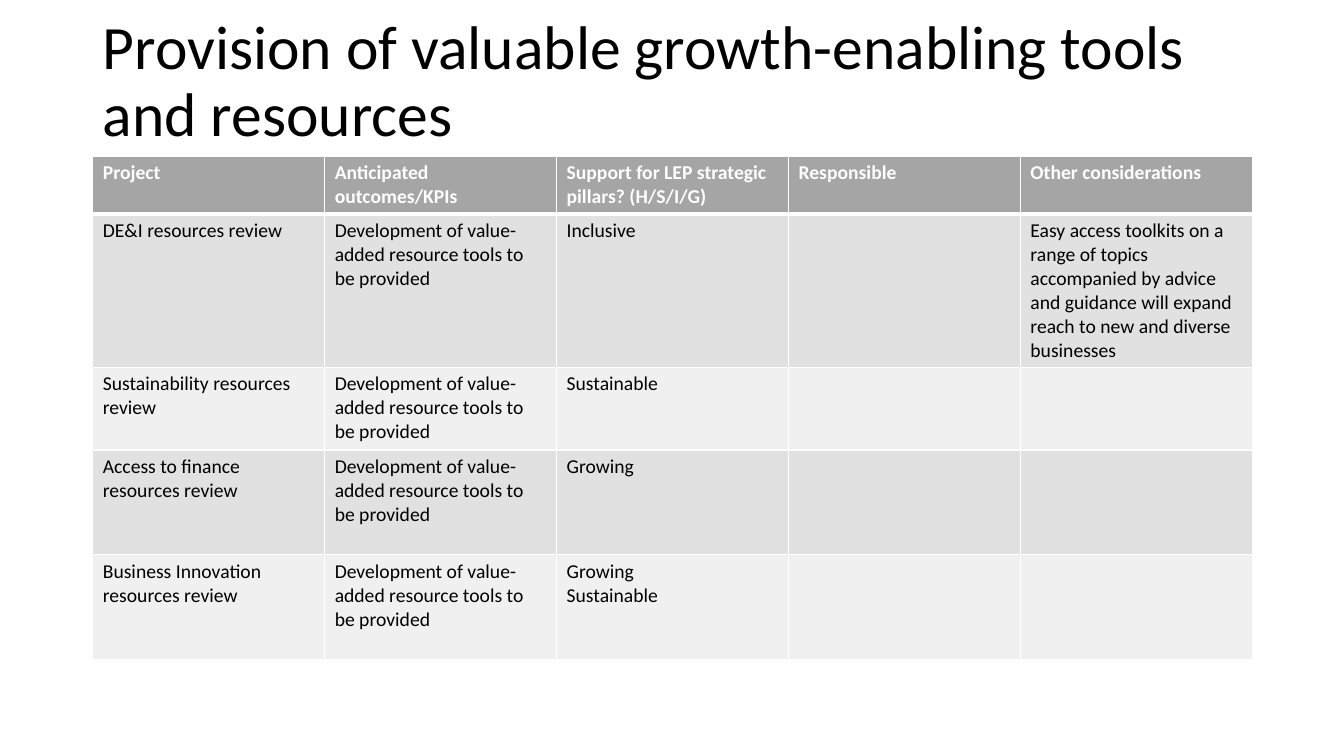
"""Build a slide with a table of growth-enabling tools and resources."""
import pptx
import pptx.dml.color
import pptx.enum.text
import pptx.oxml
import pptx.oxml.ns
import pptx.util

TITLE = "Provision of valuable growth-enabling tools and resources"
HEADERS = ["Project", "Anticipated outcomes/KPIs", "Support for LEP strategic pillars? (H/S/I/G)",
           "Responsible", "Other considerations"]
OUTCOME = "Development of value-added resource tools to be provided"
TOOLKITS = ("Easy access toolkits on a range of topics accompanied by advice and guidance "
            "will expand reach to new and diverse businesses")
PROJECTS = [
    ("DE&I resources review", "Inclusive", TOOLKITS),
    ("Sustainability resources review", "Sustainable", ""),
    ("Access to finance resources review", "Growing", ""),
    ("Business Innovation resources review", "Growing\nSustainable", ""),
]
ROWS = [HEADERS] + [[project, OUTCOME, pillars, "", other] for project, pillars, other in PROJECTS]

WIDTH, HEIGHT = 13.33, 7.5
LEFT, CONTENT_WIDTH = 0.92, 11.5
TITLE_TOP, TABLE_TOP = 0.1, 1.55
ROW_HEIGHTS = [0.57, 1.52, 0.82, 1.04, 1.04]

THEME = {
    "font": "Calibri", "title_size": 44, "table_size": 14,
    "text": "000000", "header_text": "FFFFFF", "border": "FFFFFF",
    "header_fill": "A5A5A5", "bands": ["E1E1E1", "F0F0F0"],
    "thin": 1, "thick": 3,
}


def color(value):
    """Return an RGB colour from its hex value."""
    return pptx.dml.color.RGBColor.from_string(value)


def apply(target, values):
    """Set each named attribute on the target."""
    for name, value in values.items():
        setattr(target, name, value)


def format_font(font, size, text_color, bold=False):
    """Give a font its theme face, size, colour and weight."""
    apply(font, {"name": THEME["font"], "size": pptx.util.Pt(size), "bold": bold})
    font.color.rgb = color(text_color)


def add_borders(cell, widths):
    """Draw the sides of a cell, with widths in points."""
    properties = cell._tc.get_or_add_tcPr()
    for position, (side, width) in enumerate(widths.items()):
        border = pptx.oxml.parse_xml(
            f'<a:ln{side} {pptx.oxml.ns.nsdecls("a")} w="{pptx.util.Pt(width)}"><a:solidFill>'
            f'<a:srgbClr val="{THEME["border"]}"/></a:solidFill></a:ln{side}>')
        properties.insert(position, border)


def add_title(slide):
    """Place and format the title placeholder."""
    title = slide.shapes.title
    box = {"left": LEFT, "top": TITLE_TOP, "width": CONTENT_WIDTH, "height": TABLE_TOP - TITLE_TOP}
    apply(title, {name: pptx.util.Inches(value) for name, value in box.items()})
    apply(title.text_frame, {
        "text": TITLE, "word_wrap": True,
        "auto_size": pptx.enum.text.MSO_AUTO_SIZE.NONE,
        "vertical_anchor": pptx.enum.text.MSO_ANCHOR.MIDDLE,
    })
    paragraph = title.text_frame.paragraphs[0]
    apply(paragraph, {"alignment": pptx.enum.text.PP_ALIGN.LEFT, "line_spacing": 0.9})
    format_font(paragraph.runs[0].font, THEME["title_size"], THEME["text"])


def format_cell(cell, text, row):
    """Fill a cell with its text, band colour and borders."""
    is_header = row == 0
    cell.text = text
    cell.fill.solid()
    bands = THEME["bands"]
    fill = THEME["header_fill"] if is_header else bands[(row - 1) % len(bands)]
    cell.fill.fore_color.rgb = color(fill)
    text_color = THEME["header_text"] if is_header else THEME["text"]
    for paragraph in cell.text_frame.paragraphs:
        format_font(paragraph.font, THEME["table_size"], text_color, is_header)
        for run in paragraph.runs:
            format_font(run.font, THEME["table_size"], text_color, is_header)
    thin, thick = THEME["thin"], THEME["thick"]
    add_borders(cell, {"L": thin, "R": thin, "T": thick if row == 1 else thin,
                       "B": thick if is_header else thin})


def add_project_table(slide):
    """Add the table of projects below the title."""
    box = [pptx.util.Inches(value) for value in (LEFT, TABLE_TOP, CONTENT_WIDTH, sum(ROW_HEIGHTS))]
    table = slide.shapes.add_table(len(ROWS), len(HEADERS), *box).table
    for column in table.columns:
        column.width = pptx.util.Inches(CONTENT_WIDTH / len(HEADERS))
    for row, (texts, height) in enumerate(zip(ROWS, ROW_HEIGHTS)):
        table.rows[row].height = pptx.util.Inches(height)
        for column, text in enumerate(texts):
            format_cell(table.cell(row, column), text, row)


def main():
    """Build and save the presentation."""
    presentation = pptx.Presentation()
    apply(presentation, {"slide_width": pptx.util.Inches(WIDTH),
                         "slide_height": pptx.util.Inches(HEIGHT)})
    slide = presentation.slides.add_slide(presentation.slide_layouts.get_by_name("Title Only"))
    add_title(slide)
    add_project_table(slide)
    presentation.save("out.pptx")


if __name__ == "__main__":
    main()
